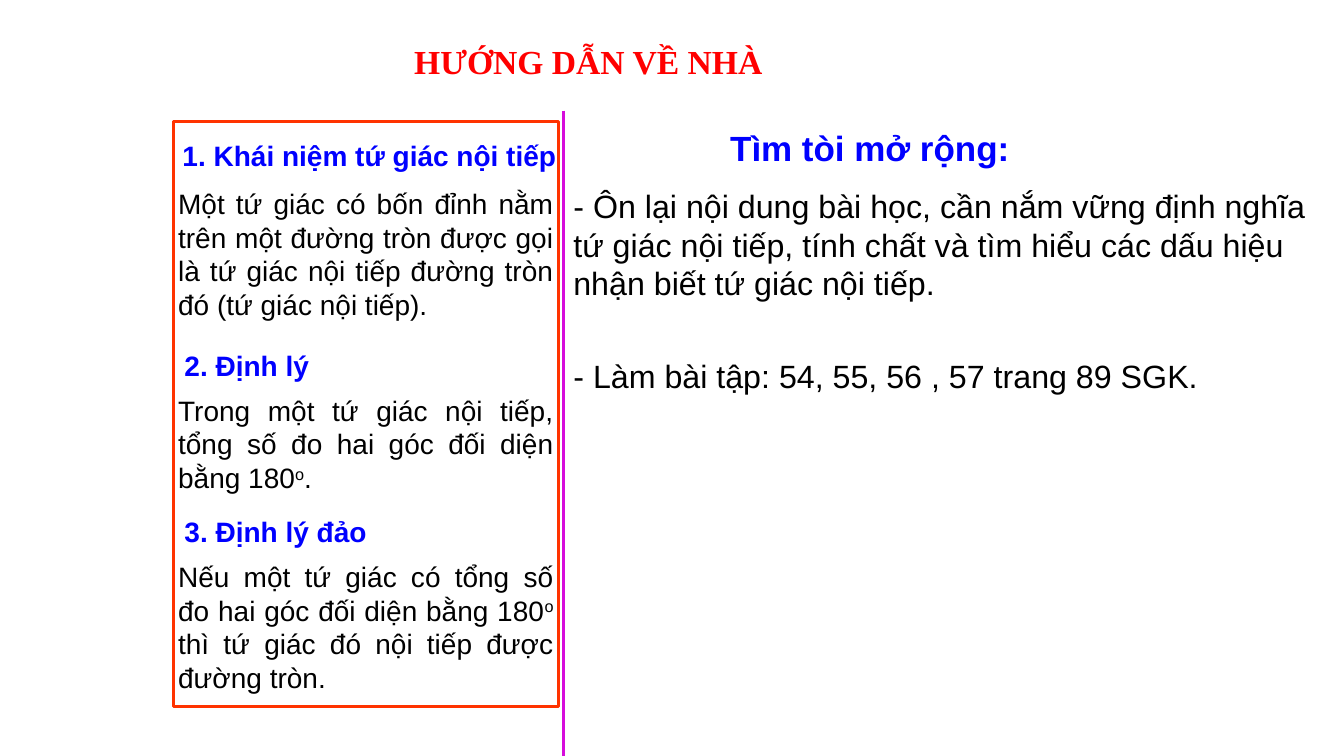
from dataclasses import dataclass

from lxml.etree import SubElement
from pptx import Presentation
from pptx.dml.color import RGBColor
from pptx.enum.shapes import MSO_CONNECTOR, MSO_SHAPE
from pptx.enum.text import MSO_AUTO_SIZE, PP_ALIGN
from pptx.oxml.ns import qn
from pptx.slide import Slide
from pptx.util import Cm, Pt

BLUE = "0000FF"
BLACK = "000000"
RED = "FF0000"
ORANGE = "FF3300"
MAGENTA = "D60CDB"
DIVIDER_LEFT = 14.2
SUPERSCRIPT_MARK = "|"


@dataclass(frozen=True)
class Box:
    left: float
    top: float
    width: float
    height: float


@dataclass(frozen=True)
class Section:
    heading: str
    heading_box: Box
    body: str
    body_box: Box


SECTIONS = (
    Section(
        "1. Khái niệm tứ giác nội tiếp",
        Box(4.47, 3.35, 10.44, 1.09),
        "Một tứ giác có bốn đỉnh nằm trên một đường tròn được gọi là tứ giác "
        "nội tiếp đường tròn đó (tứ giác nội tiếp).",
        Box(4.24, 4.57, 9.96, 3.63),
    ),
    Section(
        "2. Định lý",
        Box(4.52, 8.66, 5.66, 1.09),
        "Trong một tứ giác nội tiếp, tổng số đo hai góc đối diện bằng 180|o|.",
        Box(4.24, 9.78, 9.96, 2.79),
    ),
    Section(
        "3. Định lý đảo",
        Box(4.52, 12.83, 6.86, 1.09),
        "Nếu một tứ giác có tổng số đo hai góc đối diện bằng 180|o |"
        "thì tứ giác đó nội tiếp được đường tròn.",
        Box(4.24, 13.97, 9.96, 3.63),
    ),
)


def color(value: str) -> RGBColor:
    return RGBColor.from_string(value)


def add_text(
    slide: Slide,
    text: str,
    box: Box,
    *,
    size: float = 20,
    font_name: str = "Arial",
    font_color: str = BLACK,
    bold: bool = False,
    alignment: PP_ALIGN = PP_ALIGN.LEFT,
    left_margin: float = 0.25,
) -> None:
    shape = slide.shapes.add_textbox(
        Cm(box.left), Cm(box.top), Cm(box.width), Cm(box.height)
    )
    frame = shape.text_frame
    frame.word_wrap = True
    frame.auto_size = MSO_AUTO_SIZE.SHAPE_TO_FIT_TEXT
    frame.margin_left = Cm(left_margin)
    frame.margin_right = Cm(0.25)
    frame.margin_top = frame.margin_bottom = Cm(0.13)
    paragraph = frame.paragraphs[0]
    paragraph.alignment = alignment
    for index, piece in enumerate(text.split(SUPERSCRIPT_MARK)):
        run = paragraph.add_run()
        run.text = piece
        run.font.size = Pt(size)
        run.font.name = font_name
        run.font.bold = bold
        run.font.color.rgb = color(font_color)
        if index % 2:
            run.font._element.set("baseline", "30000")


def add_divider(slide: Slide, left: float, top: float, bottom: float) -> None:
    connector = slide.shapes.add_connector(
        MSO_CONNECTOR.STRAIGHT, Cm(left), Cm(top), Cm(left), Cm(bottom)
    )
    connector.line.color.rgb = color(MAGENTA)
    connector.line.width = Pt(1.5)
    SubElement(connector._element.spPr, qn("a:effectLst"))


def add_section(slide: Slide, section: Section) -> None:
    add_text(
        slide,
        section.heading,
        section.heading_box,
        font_color=BLUE,
        bold=True,
        left_margin=0.13,
    )
    add_text(slide, section.body, section.body_box, alignment=PP_ALIGN.JUSTIFY)


def add_frame(slide: Slide, box: Box) -> None:
    shape = slide.shapes.add_shape(
        MSO_SHAPE.RECTANGLE,
        Cm(box.left),
        Cm(box.top),
        Cm(box.width),
        Cm(box.height),
    )
    shape.shadow.inherit = False
    shape.fill.background()
    shape.line.color.rgb = color(ORANGE)
    shape.line.width = Pt(2)


def main() -> None:
    presentation = Presentation()
    presentation.slide_width = Cm(33.87)
    presentation.slide_height = Cm(19.05)
    slide = presentation.slides.add_slide(presentation.slide_layouts[6])

    add_divider(slide, DIVIDER_LEFT, 2.79, 19.05)
    for section in SECTIONS:
        add_section(slide, section)
    add_frame(slide, Box(4.37, 3.07, 9.7, 14.73))

    add_text(
        slide,
        "Tìm tòi mở rộng:",
        Box(DIVIDER_LEFT, 3.07, 15.44, 1.32),
        size=25,
        font_color=BLUE,
        bold=True,
        alignment=PP_ALIGN.CENTER,
    )
    add_text(
        slide,
        "- Ôn lại nội dung bài học, cần nắm vững định nghĩa tứ giác nội tiếp, "
        "tính chất và tìm hiểu các dấu hiệu nhận biết tứ giác nội tiếp.",
        Box(DIVIDER_LEFT, 4.57, 19.3, 3.2),
        size=23,
    )
    add_text(
        slide,
        "- Làm bài tập: 54, 55, 56 , 57 trang 89 SGK.",
        Box(DIVIDER_LEFT, 8.84, 18.62, 1.24),
        size=23,
    )
    add_text(
        slide,
        "HƯỚNG DẪN VỀ NHÀ",
        Box(10.19, 0.89, 16.03, 1.27),
        size=24,
        font_name="Times New Roman",
        font_color=RED,
        bold=True,
    )
    presentation.save("out.pptx")


if __name__ == "__main__":
    main()
